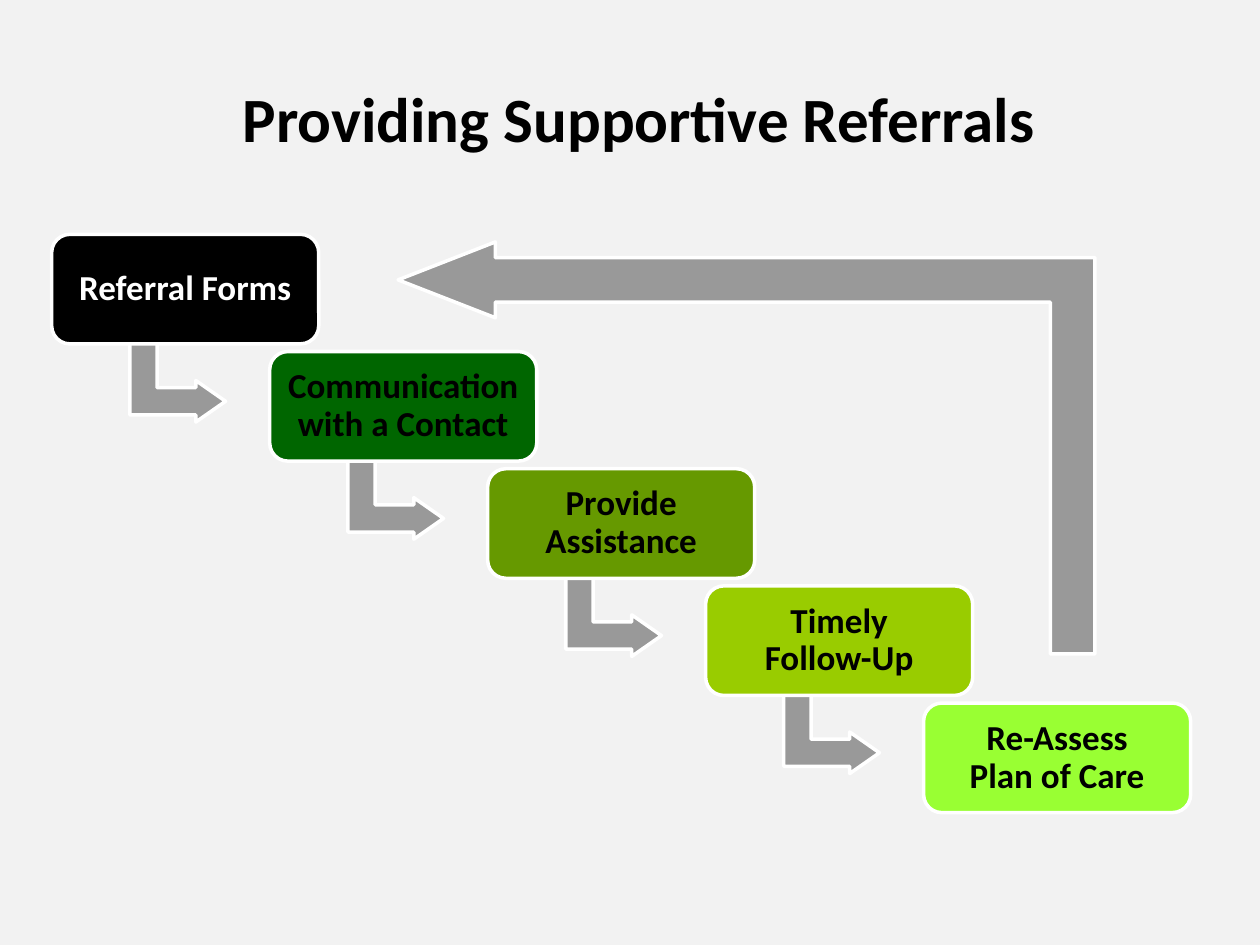
"""Build a slide showing referral steps as a descending staircase with a return arrow."""
from pptx import Presentation
from pptx.dml.color import RGBColor
from pptx.enum.shapes import MSO_SHAPE as Shape
from pptx.enum.text import MSO_ANCHOR as Anchor, PP_ALIGN as Align
from pptx.util import Inches, Pt

FONT = "Calibri"
BACKGROUND, ARROW_GREY, BLACK, WHITE = "F2F2F2", "999999", "000000", "FFFFFF"
LEFT, TOP = 0.41, 1.86
COLUMN, ROW = 1.73, 0.93
STEP_SIZE = (2.12, 0.87)
STEPS = [
    (("Referral Forms",), BLACK, WHITE),
    (("Communication with a Contact",), "006600", BLACK),
    (("Provide Assistance",), "669900", BLACK),
    (("Timely", "Follow-Up"), "99CC00", BLACK),
    (("Re-Assess", "Plan of Care"), "99FF33", BLACK),
]


def colour(value):
    """Turn a hex string into a colour."""
    return RGBColor.from_string(value)


def add_figure(page, kind, place, fill, adjustments):
    """Add a filled preset shape with a white outline."""
    figure = page.shapes.add_shape(kind, *map(Inches, place))
    figure.shadow.inherit = False
    figure.fill.solid()
    figure.fill.fore_color.rgb = colour(fill)
    figure.line.color.rgb = colour(WHITE)
    figure.line.width = Pt(2)
    for index, share in enumerate(adjustments):
        figure.adjustments[index] = share
    return figure


def add_arrow(page, place, rotation, adjustments):
    """Add a grey bent arrow."""
    arrow = add_figure(page, Shape.BENT_UP_ARROW, place, ARROW_GREY, adjustments)
    arrow.rotation = rotation


def write(box, lines, size, ink):
    """Write centred bold lines as one paragraph."""
    box.text_frame.word_wrap = True
    para = box.text_frame.paragraphs[0]
    para.alignment = Align.CENTER
    for index, line in enumerate(lines):
        if index:
            para.add_line_break()
        span = para.add_run()
        span.text = line
        span.font.name = FONT
        span.font.size = Pt(size)
        span.font.bold = True
        span.font.color.rgb = colour(ink)
    return para


def add_step(page, place, lines, fill, ink):
    """Add a rounded box that names one step."""
    box = add_figure(page, Shape.ROUNDED_RECTANGLE, place, fill, [0.167])
    frame = box.text_frame
    frame.vertical_anchor = Anchor.MIDDLE
    frame.margin_left = frame.margin_right = Inches(0.06)
    frame.margin_top = frame.margin_bottom = Inches(0.06)
    write(box, lines, 20, ink).line_spacing = 0.9


def add_staircase(page):
    """Place the steps down the diagonal, joined by small arrows."""
    for index, (lines, fill, ink) in enumerate(STEPS):
        left, top = LEFT + index * COLUMN, TOP + index * ROW
        if index < len(STEPS) - 1:
            place = (left + 0.67, top + 0.78, 0.66, 0.76)
            add_arrow(page, place, 90, [0.328, 0.25, 0.358])
        add_step(page, (left, top, *STEP_SIZE), lines, fill, ink)


def add_title(page, text):
    """Add the slide title."""
    box = page.shapes.add_textbox(*map(Inches, (0.53, 0.58, 9.08, 0.71)))
    write(box, [text], 36, BLACK)


def main():
    """Build and save the deck."""
    deck = Presentation()
    deck.slide_width, deck.slide_height = Inches(10), Inches(7.5)
    page = deck.slides.add_slide(deck.slide_layouts[6])
    page.background.fill.solid()
    page.background.fill.fore_color.rgb = colour(BACKGROUND)
    add_staircase(page)
    add_arrow(page, (4.29, 0.79, 3.27, 5.53), 270, [0.108, 0.092, 0.236])
    add_title(page, "Providing Supportive Referrals")
    deck.save("out.pptx")


if __name__ == "__main__":
    main()
